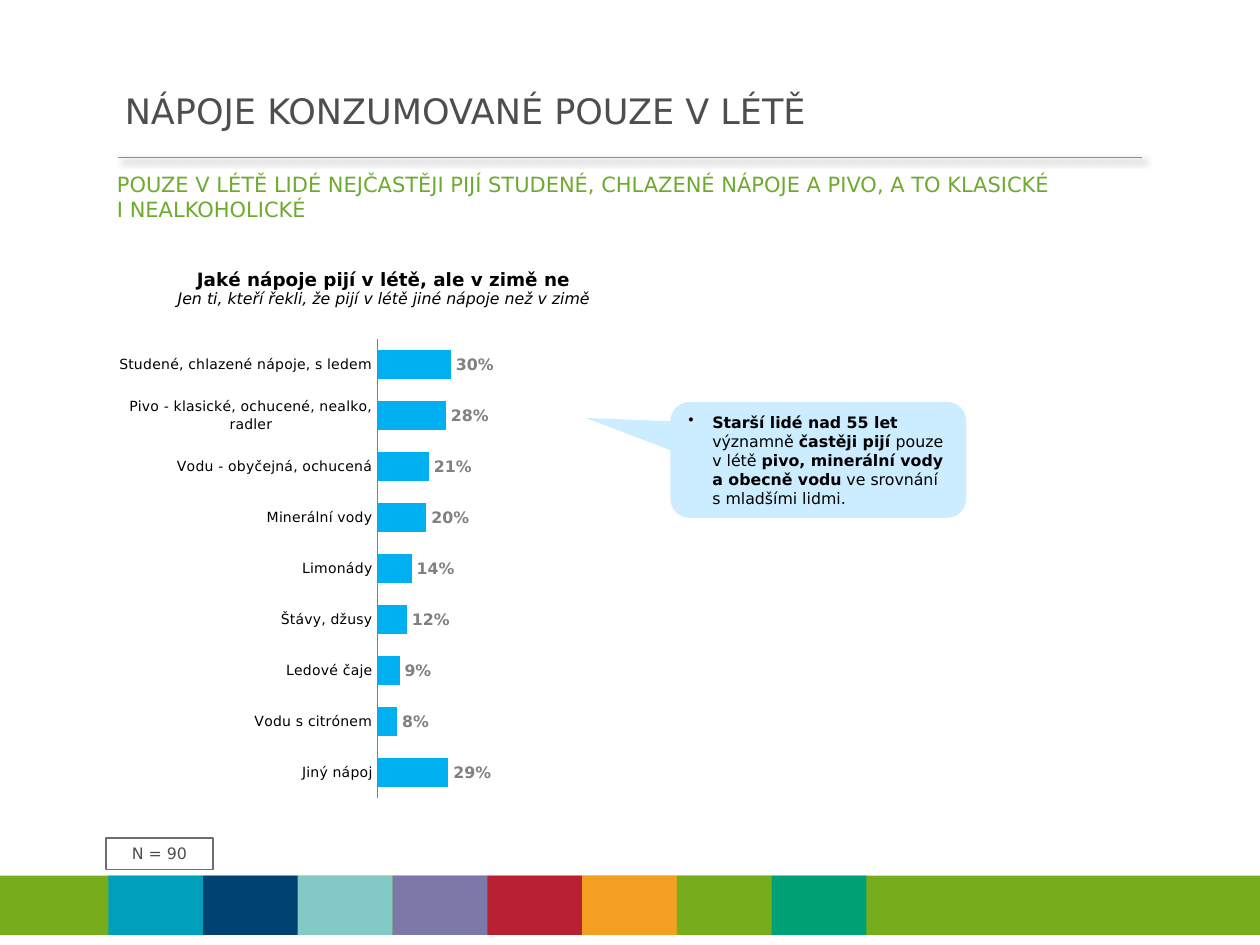
from lxml import etree
from pptx import Presentation
from pptx import util as u
from pptx.chart.data import CategoryChartData
from pptx.dml.color import RGBColor
from pptx.enum import chart as charts, shapes, text
from pptx.oxml import parse_xml
from pptx.oxml.ns import nsdecls, qn

WIDTH, HEIGHT = u.Inches(10), u.Inches(7.5)
FONT = "DejaVu Sans"
COLORS = {
    "green": "77AD1C", "lime": "6EAA2E", "cyan": "009FBB", "navy": "004272",
    "mint": "83C9C6", "violet": "7C78A8", "red": "B92032", "orange": "F49F22",
    "teal": "00A275", "bar": "00B0F0", "callout": "CCECFF", "black": "000000",
    "dark": "4E4E4E", "frame": "6E6E6E", "label": "808080",
}
BAND = ["cyan", "navy", "mint", "violet", "red", "orange", "green", "teal"]
DRINKS = {
    "Studené, chlazené nápoje, s ledem": 0.30,
    "Pivo - klasické, ochucené, nealko, radler": 0.28,
    "Vodu - obyčejná, ochucená": 0.21,
    "Minerální vody": 0.20,
    "Limonády": 0.14,
    "Štávy, džusy": 0.12,
    "Ledové čaje": 0.09,
    "Vodu s citrónem": 0.08,
    "Jiný nápoj": 0.29,
}


def color(name):
    return RGBColor.from_string(COLORS[name])


def area(left, top, width, height):
    """Turn percentages of the slide into lengths."""
    return [int(whole * share / 100) for whole, share in
            zip((WIDTH, HEIGHT, WIDTH, HEIGHT), (left, top, width, height))]


def style(font, size, ink="black", bold=False, italic=False):
    font.name, font.size = FONT, u.Pt(size)
    font.bold, font.italic = bold, italic
    font.color.rgb = color(ink)


def write(para, content, align=text.PP_ALIGN.LEFT, **look):
    """Add a span; a newline in the content becomes a line break."""
    para.alignment = align
    for number, line in enumerate(content.split("\n")):
        if number:
            para.add_line_break()
        span = para.add_run()
        span.text = line
        style(span.font, **look)


def add_block(page, kind, place, fill=None, line=None):
    block = page.shapes.add_shape(kind, *area(*place))
    block.shadow.inherit = False
    if fill:
        block.fill.solid()
        block.fill.fore_color.rgb = color(fill)
    else:
        block.fill.background()
    if line:
        block.line.color.rgb = color(line)
        block.line.width = u.Pt(0.75)
    else:
        block.line.fill.background()
    return block


def add_rule(page):
    left, top, width, _ = area(9.4, 16.67, 81.2, 0)
    rule = page.shapes.add_connector(
        shapes.MSO_CONNECTOR.STRAIGHT, left, top, left + width, top)
    rule.line.color.rgb = color("green")
    rule.line.width = u.Pt(0.75)
    rule._element.spPr.append(parse_xml(
        f'<a:effectLst {nsdecls("a")}><a:outerShdw blurRad="{u.Pt(4)}" '
        f'dist="{u.Pt(3)}" dir="2700000"><a:srgbClr val="{COLORS["black"]}">'
        '<a:alpha val="40000"/></a:srgbClr></a:outerShdw></a:effectLst>'))


def add_band(page):
    step = 7.52
    add_block(page, shapes.MSO_SHAPE.RECTANGLE, (0, 92.67, 100, 6.27), "green")
    for column, name in enumerate(BAND):
        add_block(page, shapes.MSO_SHAPE.RECTANGLE,
                  (8.6 + column * step, 92.67, step, 6.27), name)


def add_title(page, content):
    title = page.shapes.title
    title.left, title.top, title.width, title.height = area(8.9, 8.27, 88.7, 6.8)
    title.text_frame.vertical_anchor = text.MSO_ANCHOR.MIDDLE
    para = title.text_frame.paragraphs[0]
    para.space_after = u.Pt(3)
    write(para, content, size=20, ink="dark")


def add_subtitle(page, content):
    box = page.shapes.add_textbox(*area(8.3, 17.47, 83.5, 10.67))
    box.text_frame.word_wrap = True
    write(box.text_frame.paragraphs[0], content, size=12, ink="lime")


def layout(x, y, width=None, height=None):
    """Manual chart layout, in shares of the chart."""
    values = {"xMode": "edge", "yMode": "edge", "x": x, "y": y}
    if width:
        values = {"layoutTarget": "inner", **values, "w": width, "h": height}
    root = etree.Element(qn("c:layout"))
    manual = etree.SubElement(root, qn("c:manualLayout"))
    for tag, value in values.items():
        etree.SubElement(manual, qn("c:" + tag)).set("val", str(value))
    return root


def place_part(part, new_layout):
    """Swap in a layout, which follows the text of a title."""
    for old in part.findall(qn("c:layout")):
        part.remove(old)
    rich = part.find(qn("c:tx"))
    part.insert(0 if rich is None else part.index(rich) + 1, new_layout)


def add_drinks_chart(page):
    data = CategoryChartData(number_format="0%")
    data.categories = list(DRINKS)
    data.add_series("Series 1", list(DRINKS.values()))
    chart = page.shapes.add_chart(charts.XL_CHART_TYPE.BAR_CLUSTERED,
                                  *area(7.8, 27.2, 46.2, 62.27), data).chart
    chart.has_legend = False
    style(chart.font, 18)

    # Two-line heading
    chart.has_title = True
    heading = chart.chart_title.text_frame
    center = text.PP_ALIGN.CENTER
    write(heading.paragraphs[0], "Jaké nápoje pijí v létě, ale v zimě ne",
          center, size=10.5, bold=True)
    write(heading.add_paragraph(),
          "Jen ti, kteří řekli, že pijí v létě jiné nápoje než v zimě",
          center, size=9, italic=True)
    chart.chart_title.include_in_layout = False
    place_part(chart.chart_title._element, layout(0.13, 0.01))
    place_part(chart._chartSpace.chart.plotArea, layout(0.48, 0.14, 0.42, 0.78))

    # Axes
    names, scale = chart.category_axis, chart.value_axis
    names.reverse_order = True
    names.major_tick_mark = charts.XL_TICK_MARK.NONE
    names.format.line.color.rgb = color("label")
    style(names.tick_labels.font, 8)
    scale.minimum_scale, scale.maximum_scale = 0, 1
    scale.has_major_gridlines = False
    scale.visible = False

    # Bars and their values
    plot = chart.plots[0]
    plot.gap_width, plot.vary_by_categories = 75, False
    fill = plot.series[0].format.fill
    fill.solid()
    fill.fore_color.rgb = color("bar")
    plot.has_data_labels = True
    labels = plot.data_labels
    labels.show_value = True
    labels.number_format, labels.number_format_is_linked = "0%", False
    labels.position = charts.XL_LABEL_POSITION.OUTSIDE_END
    style(labels.font, 9, "label", bold=True)


def add_sample_size(page, content):
    block = add_block(page, shapes.MSO_SHAPE.RECTANGLE,
                      (8.4, 88.67, 8.5, 3.33), line="frame")
    write(block.text_frame.paragraphs[0], content, text.PP_ALIGN.CENTER,
          size=9, ink="dark")


def add_callout(page, parts):
    """Bulleted callout whose spans alternate between bold and plain."""
    block = add_block(page, shapes.MSO_SHAPE.ROUNDED_RECTANGULAR_CALLOUT,
                      (53.2, 42.53, 23.5, 12.27), "callout")
    for index, value in enumerate((-0.785, -0.361, 0.167)):
        block.adjustments[index] = value
    para = block.text_frame.paragraphs[0]
    props = para._p.get_or_add_pPr()
    indent = u.Inches(0.19)
    props.set("marL", str(indent))
    props.set("indent", str(-indent))
    etree.SubElement(props, qn("a:buChar")).set("char", "•")
    for number, part in enumerate(parts):
        write(para, part, size=9, bold=number % 2 == 0)


def main():
    deck = Presentation()
    deck.slide_width, deck.slide_height = WIDTH, HEIGHT
    page = deck.slides.add_slide(deck.slide_layouts[5])
    add_rule(page)
    add_band(page)
    add_title(page, "NÁPOJE KONZUMOVANÉ POUZE V LÉTĚ")
    add_subtitle(page, "POUZE V LÉTĚ LIDÉ NEJČASTĚJI PIJÍ STUDENÉ, CHLAZENÉ "
                       "NÁPOJE A PIVO, A TO KLASICKÉ \nI NEALKOHOLICKÉ")
    add_drinks_chart(page)
    add_sample_size(page, "N = 90")
    add_callout(page, ["Starší lidé nad 55 let ", "významně ", "častěji pijí ",
                       "pouze v létě ", "pivo, minerální vody a obecně vodu",
                       " ve srovnání s mladšími lidmi."])
    deck.save("out.pptx")


if __name__ == "__main__":
    main()
